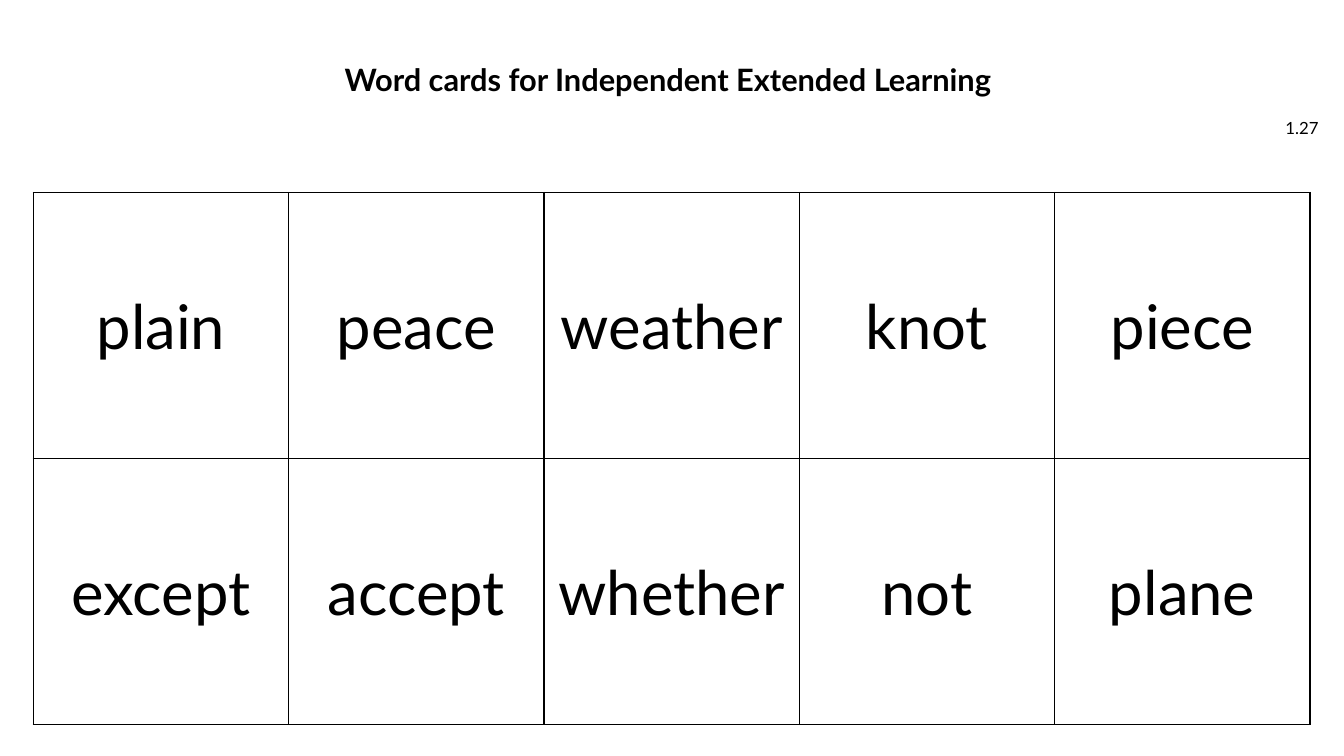
"""Build a slide of word cards for independent learning."""
import pptx
import pptx.dml.color
import pptx.enum.text
import pptx.oxml
import pptx.oxml.ns
import pptx.util

Pt = pptx.util.Pt
ALIGN = pptx.enum.text.PP_ALIGN
ANCHOR = pptx.enum.text.MSO_ANCHOR

TITLE = "Word cards for Independent Extended Learning "
CARD_NUMBER = "1.27"
WORDS = [
    ["plain", "peace", "weather", "knot", "piece"],
    ["except", "accept", "whether", "not", "plane"],
]

FONT = "Lato"
BLACK, WHITE = "000000", "FFFFFF"
TITLE_BOX = (166.3, 46.1, 627.1, 25.2)
NUMBER_BOX = (903.6, 77, 45.4, 28.8)
TABLE_LEFT, TABLE_TOP = 23.8, 137.5
CARD_WIDTH, CARD_HEIGHT = 182.4, 190


def color(hex_string):
    return pptx.dml.color.RGBColor.from_string(hex_string)


def write(frame, text, size, align=ALIGN.CENTER, bold=False, spacing=None):
    paragraph = frame.paragraphs[0]
    paragraph.alignment = align
    paragraph.line_spacing = spacing
    run = paragraph.add_run()
    run.text = text
    run.font.name = FONT
    run.font.size = Pt(size)
    run.font.bold = bold
    run.font.color.rgb = color(BLACK)


def add_borders(cell, line_color=BLACK, width=1):
    properties = cell._tc.get_or_add_tcPr()
    for position, side in enumerate(("lnL", "lnR", "lnT", "lnB")):
        border = pptx.oxml.parse_xml(
            f'<a:{side} {pptx.oxml.ns.nsdecls("a")} w="{Pt(width)}">'
            f'<a:solidFill><a:srgbClr val="{line_color}"/></a:solidFill></a:{side}>'
        )
        properties.insert(position, border)


def add_title(slide):
    title = slide.shapes.title
    title.left, title.top, title.width, title.height = map(Pt, TITLE_BOX)
    frame = title.text_frame
    frame.margin_left = frame.margin_right = frame.margin_top = frame.margin_bottom = 0
    frame.vertical_anchor = ANCHOR.TOP
    frame.auto_size = pptx.enum.text.MSO_AUTO_SIZE.NONE
    write(frame, TITLE, 22, bold=True, spacing=0.9)


def add_number(slide):
    frame = slide.shapes.add_textbox(*map(Pt, NUMBER_BOX)).text_frame
    frame.word_wrap = True
    frame.vertical_anchor = ANCHOR.MIDDLE
    write(frame, CARD_NUMBER, 12, align=ALIGN.RIGHT)


def add_cards(slide):
    row_count, column_count = len(WORDS), len(WORDS[0])
    table = slide.shapes.add_table(
        row_count, column_count, Pt(TABLE_LEFT), Pt(TABLE_TOP),
        Pt(CARD_WIDTH * column_count), Pt(CARD_HEIGHT * row_count),
    ).table
    table.first_row = table.horz_banding = False
    for column in table.columns:
        column.width = Pt(CARD_WIDTH)
    for row, words in zip(table.rows, WORDS):
        row.height = Pt(CARD_HEIGHT)
        for cell, word in zip(row.cells, words):
            cell.fill.solid()
            cell.fill.fore_color.rgb = color(WHITE)
            cell.vertical_anchor = ANCHOR.MIDDLE
            add_borders(cell)
            write(cell.text_frame, word, 44)


def main():
    presentation = pptx.Presentation()
    presentation.slide_width, presentation.slide_height = Pt(960), Pt(540)
    slide = presentation.slides.add_slide(presentation.slide_layouts[5])
    add_number(slide)
    add_title(slide)
    add_cards(slide)
    presentation.save("out.pptx")


if __name__ == "__main__":
    main()
